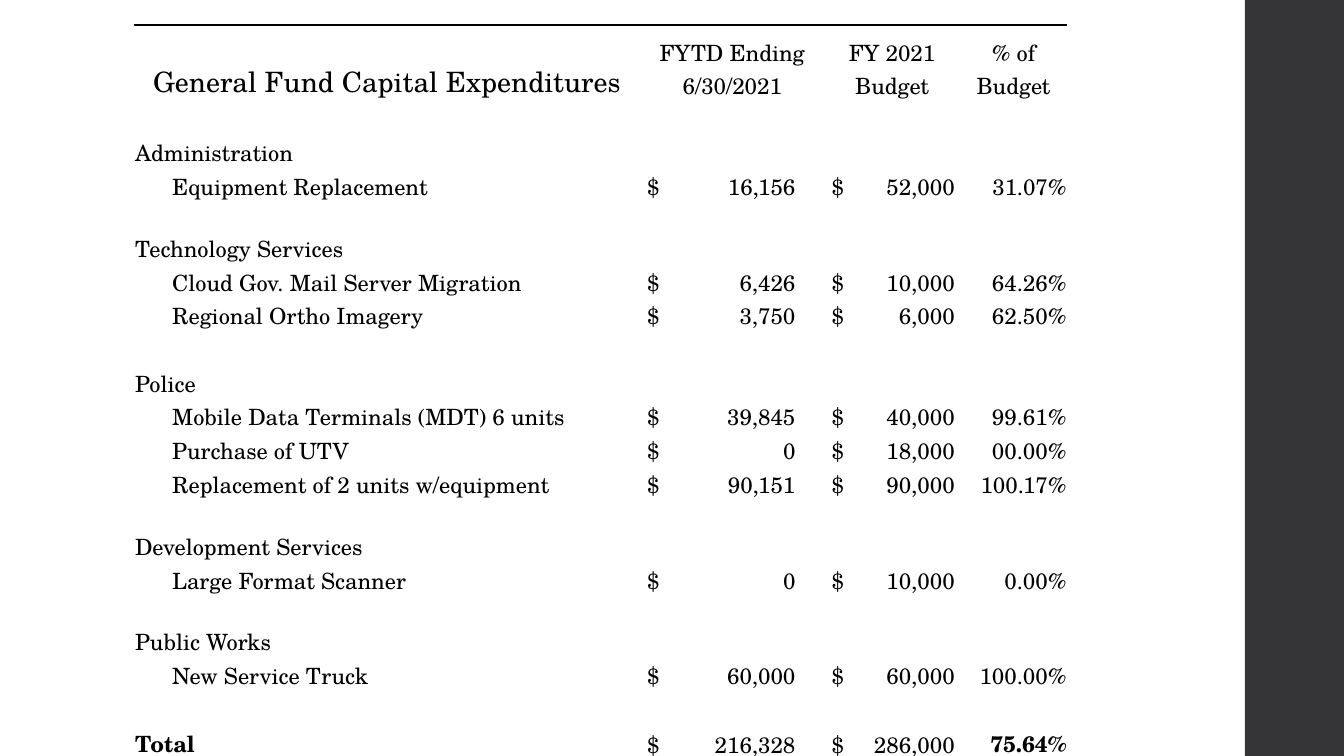
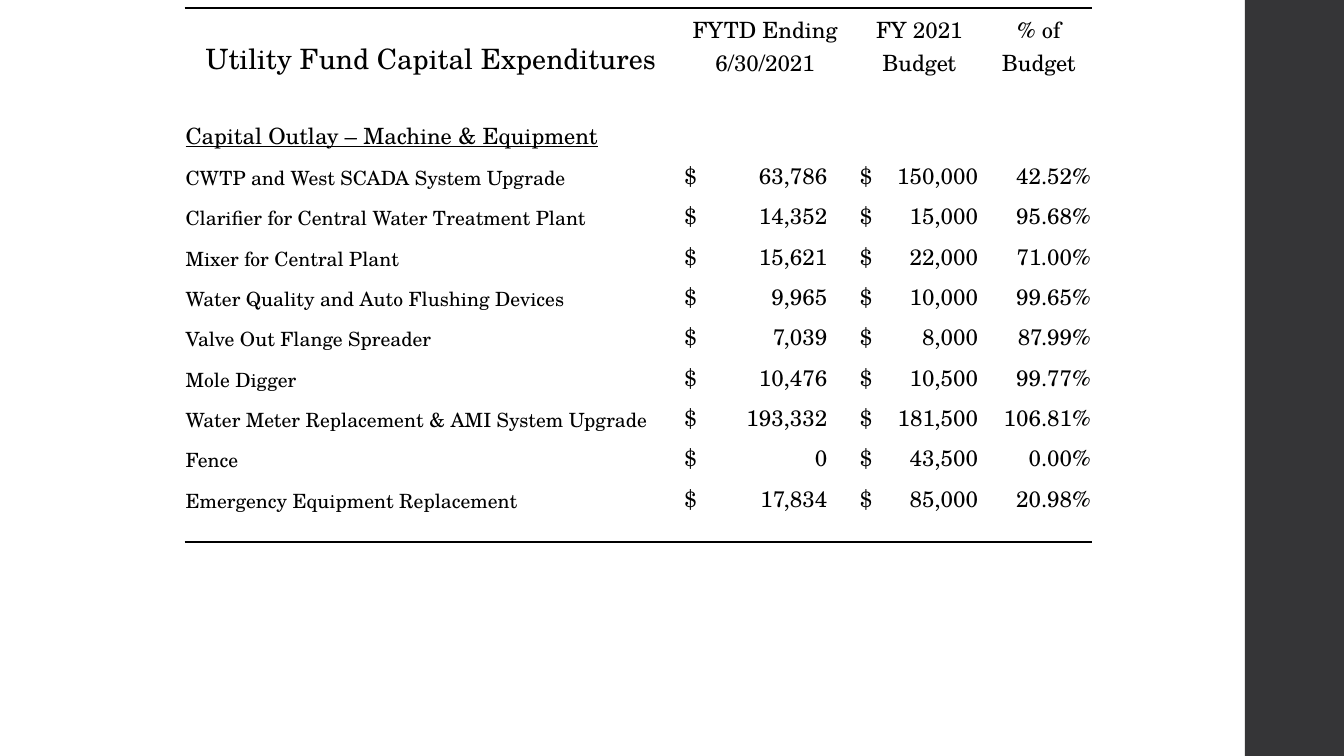
import dataclasses

import pptx
import pptx.dml.color
import pptx.enum.shapes
import pptx.enum.text
import pptx.oxml
import pptx.oxml.ns
import pptx.util

Pt = pptx.util.Pt
Align = pptx.enum.text.PP_ALIGN
COLORS = {"band": "353537", "page": "FFFFFF", "ink": "000000"}
FONT = "TeX Gyre Schola"
NO_STYLE = "{2D5ABB26-0587-4C30-8999-92F81FD0307C}"
EDGE = 0.72
LEAD = 5
INDENT = 27.2
HEADS = ("FYTD Ending 6/30/2021", "FY 2021 Budget", "% of Budget")


@dataclasses.dataclass
class Row:
    high: float
    name: str = ""
    spent: str = ""
    plan: str = ""
    share: str = ""
    pad: float = EDGE
    size: float = 16
    bold: bool = False
    under: bool = False


@dataclasses.dataclass
class Sheet:
    title: str
    left: float
    top: float
    head: float
    cols: tuple[float, ...]
    tabs: tuple[float, float]
    rows: list[Row]


def item(*texts: str) -> Row:
    return Row(24, *texts, pad=INDENT)


def work(*texts: str) -> Row:
    return Row(28.8, *texts, size=14)


SHEETS = [
    Sheet("General Fund Capital Expenditures", 95.8, 18, 54.7,
          (361.4, 131.8, 96.5, 77), (106, 88), [
              Row(24),
              Row(24, "Administration"),
              item("Equipment Replacement", "16,156", "52,000", "31.07%"),
              Row(20),
              Row(24, "Technology Services"),
              item("Cloud Gov. Mail Server Migration", "6,426", "10,000", "64.26%"),
              item("Regional Ortho Imagery", "3,750", "6,000", "62.50%"),
              Row(48, "Police"),
              item("Mobile Data Terminals (MDT) 6 units", "39,845", "40,000", "99.61%"),
              item("Purchase of UTV", "0", "18,000", "00.00%"),
              item("Replacement of 2 units w/equipment", "90,151", "90,000", "100.17%"),
              Row(20),
              Row(24, "Development Services"),
              item("Large Format Scanner", "0", "10,000", "0.00%"),
              Row(20),
              Row(24, "Public Works"),
              item("New Service Truck", "60,000", "60,000", "100.00%"),
              Row(24),
              Row(24, "Total", "216,328", "286,000", "75.64%", bold=True),
          ]),
    Sheet("Utility Fund Capital Expenditures", 131.8, 5.8, 50.4,
          (352.1, 125.3, 95, 75.6), (102, 84.4), [
              Row(23.4),
              Row(28.8, "Capital Outlay – Machine & Equipment", under=True),
              work("CWTP and West SCADA System Upgrade", "63,786", "150,000", "42.52%"),
              work("Clarifier for Central Water Treatment Plant", "14,352", "15,000", "95.68%"),
              work("Mixer for Central Plant", "15,621", "22,000", "71.00%"),
              work("Water Quality and Auto Flushing Devices", "9,965", "10,000", "99.65%"),
              work("Valve Out Flange Spreader", "7,039", "8,000", "87.99%"),
              work("Mole Digger", "10,476", "10,500", "99.77%"),
              work("Water Meter Replacement & AMI System Upgrade", "193,332", "181,500", "106.81%"),
              work("Fence", "0", "43,500", "0.00%"),
              work("Emergency Equipment Replacement", "17,834", "85,000", "20.98%"),
              Row(19.4),
          ]),
]


def tint(name: str) -> pptx.dml.color.RGBColor:
    return pptx.dml.color.RGBColor.from_string(COLORS[name])


def make(tag: str, inner: str = "", **attrs: object):
    text = " ".join(f'{key}="{val}"' for key, val in attrs.items())
    space = pptx.oxml.ns.nsdecls("a")
    return pptx.oxml.parse_xml(f"<a:{tag} {space} {text}>{inner}</a:{tag}>")


def rule(cell, side: str) -> None:
    fill = f'<a:solidFill><a:srgbClr val="{COLORS["ink"]}"/></a:solidFill>'
    cell._tc.get_or_add_tcPr().insert(0, make("ln" + side, fill, w=Pt(2)))


def blank(cell) -> None:
    cell.fill.solid()
    cell.fill.fore_color.rgb = tint("page")
    cell.text_frame.paragraphs[0]._p.append(make("endParaRPr", sz=1200))


def write(cell, text: str, align=Align.LEFT, pad: float = EDGE, tab: float = 0,
          size: float = 16, **looks: object) -> None:
    margins = {"left": pad, "top": EDGE, "right": EDGE, "bottom": 0}
    for side, gap in margins.items():
        setattr(cell, "margin_" + side, Pt(gap))
    cell.vertical_anchor = pptx.enum.text.MSO_ANCHOR.BOTTOM
    if not text:
        blank(cell)
        return
    cell.fill.solid()
    cell.fill.fore_color.rgb = tint("page")
    line = cell.text_frame.paragraphs[0]
    line.alignment = align
    if tab:
        stop = f'<a:tab pos="{Pt(tab)}" algn="r"/>'
        line._p.get_or_add_pPr().append(make("tabLst", stop))
    run = line.add_run()
    run.text = text
    for key, val in {"name": FONT, "size": Pt(size), **looks}.items():
        setattr(run.font, key, val)
    run.font.color.rgb = tint("ink")


def band(slide) -> None:
    bar = slide.shapes.add_shape(pptx.enum.shapes.MSO_SHAPE.RECTANGLE,
                                 Pt(889.2), Pt(0), Pt(72), Pt(540))
    bar.shadow.inherit = False
    bar.fill.solid()
    bar.fill.fore_color.rgb = tint("band")
    bar.line.fill.background()


def grid(slide, sheet: Sheet) -> None:
    highs = [sheet.head, *(row.high for row in sheet.rows)]
    frame = slide.shapes.add_table(len(highs), len(sheet.cols), Pt(sheet.left),
                                   Pt(sheet.top), Pt(sum(sheet.cols)), Pt(sum(highs)))
    table = frame.table
    table.first_row = table.horz_banding = False
    table._tbl.tblPr.find(pptx.oxml.ns.qn("a:tableStyleId")).text = NO_STYLE
    for col, wide in zip(table.columns, sheet.cols):
        col.width = Pt(wide)
    for line, high in zip(table.rows, highs):
        line.height = Pt(high)
    for spot, text in enumerate((sheet.title, *HEADS)):
        write(table.cell(0, spot), text, Align.CENTER, size=16 if spot else 20)
    for spot, row in enumerate(sheet.rows, 1):
        name, spent, plan, share = (table.cell(spot, col) for col in range(4))
        write(name, row.name, pad=row.pad, size=row.size,
              bold=row.bold, underline=row.under)
        sums = zip((spent, plan), (row.spent, row.plan), sheet.tabs)
        for cell, text, tab in sums:
            write(cell, text and "$\t" + text, pad=LEAD, tab=tab)
        write(share, row.share, Align.RIGHT, bold=row.bold)
    for col in range(len(sheet.cols)):
        rule(table.cell(0, col), "T")
        rule(table.cell(len(highs) - 1, col), "B")


def main() -> None:
    deck = pptx.Presentation()
    deck.slide_width, deck.slide_height = Pt(960), Pt(540)
    for sheet in SHEETS:
        slide = deck.slides.add_slide(deck.slide_layouts[6])
        band(slide)
        grid(slide, sheet)
    deck.save("out.pptx")


if __name__ == "__main__":
    main()
